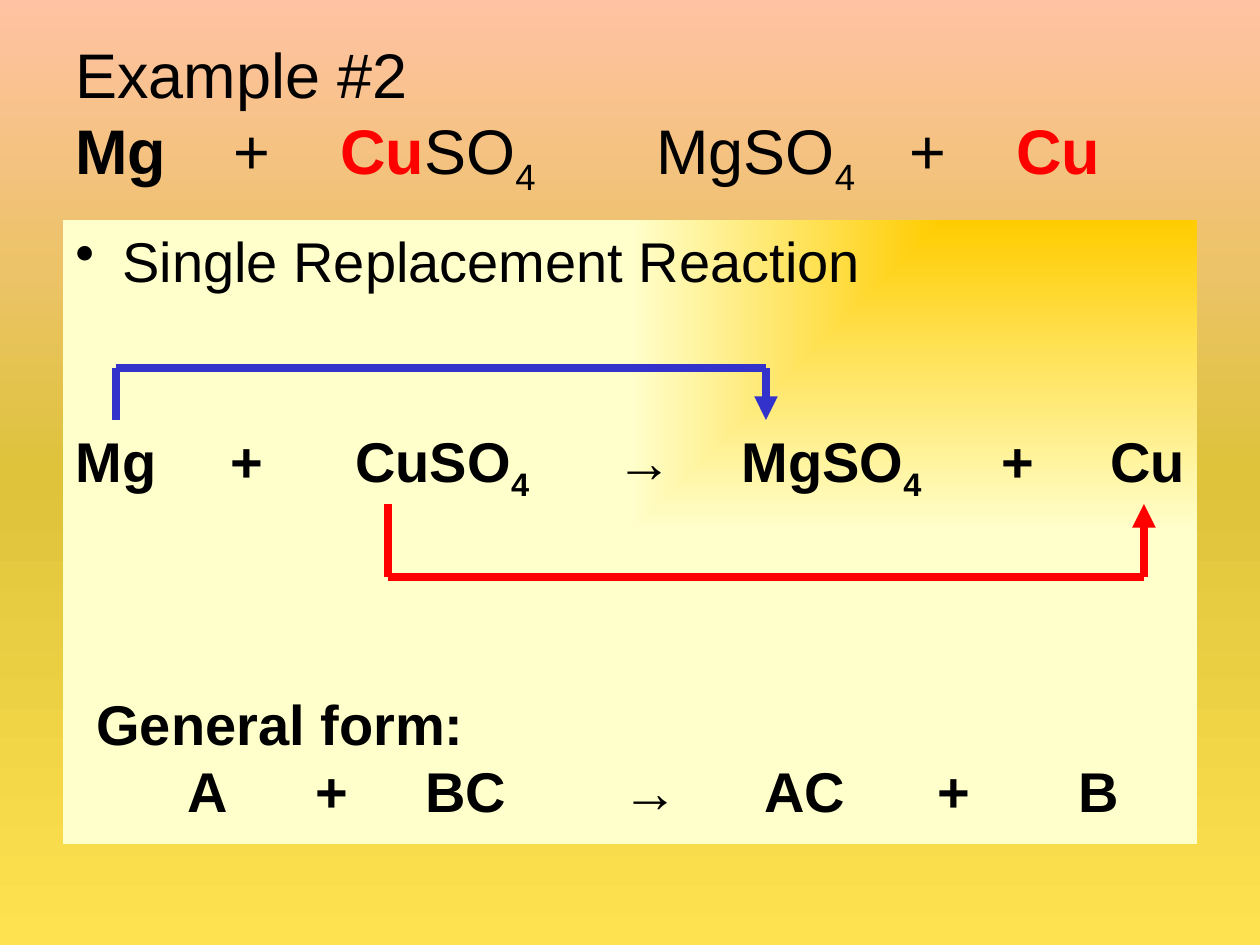
from pptx import Presentation, util as u
from pptx.dml.color import RGBColor
from pptx.enum import shapes as s, text as t
from pptx.oxml import parse_xml
from pptx.oxml.ns import nsdecls

THEME = {
    "font": "Arial", "ink": "000000", "red": "FF0000", "blue": "3333CC",
    "title": 36, "body": 32, "line": 4.5,
    "sky": [(0, "FFC2A3"), (50, "DEC33B"), (100, "FFE24F")],
    "panel": [(0, "FFCC00"), (100, "FFFFCC")],
}

# Content: a run is (text, marks), with b bold, r red, s subscript
TITLE = [
    {"runs": [("Example #2", "")]},
    {"runs": [("Mg", "b"), ("\t+\t", ""), ("Cu", "br"), ("SO", ""), ("4", "s"),
              ("\tMgSO", ""), ("4", "s"), ("\t+\t", ""), ("Cu", "br")],
     "tabs": [158, 265, 581, 834, 941]},
]
KIND = [{"runs": [("Single Replacement Reaction", "")], "bullet": 47}]
EQUATION = [
    {"runs": [("Mg\t+\tCuSO", "b"), ("4", "bs"), ("\t→\tMgSO", "b"),
              ("4", "bs"), ("\t+\tCu", "b")],
     "tabs": [155, 280, 541, 666, 926, 1035]},
]
GENERAL = [
    {"runs": [("General form:", "b")]},
    {"runs": [("\tA\t+\tBC\t→\tAC\t+\tB", "b")],
     "tabs": [91, 219, 329, 526, 668, 841, 982]},
]
TEXTS = [  # box, paragraphs, size, anchor, fill
    ((63, 38, 1134, 157), TITLE, "title", "MIDDLE", None),
    ((63, 220, 1134, 624), KIND, "body", "TOP", "panel"),
    ((63, 420, 1145, 79), EQUATION, "body", "TOP", None),
    ((84, 683, 1071, 147), GENERAL, "body", "TOP", None),
]
SWAPS = [  # colour, x from, x to, y at the text, y of the bar
    ("blue", 116, 766, 420, 368),
    ("red", 388, 1144, 504, 577),
]


def px(n):
    return round(n * 914400 / 126)


def rgb(name):
    return RGBColor.from_string(THEME[name])


def xml(tag, attrs="", inner=""):
    return parse_xml(f'<a:{tag} {nsdecls("a")} {attrs}>{inner}</a:{tag}>')


def shade(fill, root, name, kind):
    """Put the theme's gradient stops and direction in place of the default."""
    fill.gradient()
    stops = "".join(f'<a:gs pos="{pos * 1000}"><a:srgbClr val="{col}"/></a:gs>'
                    for pos, col in THEME[name])
    old = root.xpath(".//a:gradFill")[0]
    old.getparent().replace(
        old, xml("gradFill", 'rotWithShape="1"', f"<a:gsLst>{stops}</a:gsLst>{kind}"))


def write(frame, paras, size, anchor):
    look = {"word_wrap": True, "vertical_anchor": getattr(t.MSO_ANCHOR, anchor)}
    for key, val in look.items():
        setattr(frame, key, val)
    for i, item in enumerate(paras):
        para = frame.paragraphs[0] if i == 0 else frame.add_paragraph()
        para.alignment = t.PP_ALIGN.LEFT
        props = para._p.get_or_add_pPr()
        if "bullet" in item:
            gap = px(item["bullet"])
            props.set("marL", str(gap))
            props.set("indent", str(-gap))
            props.append(xml("spcBef", "", '<a:spcPct val="20000"/>'))
            props.append(xml("buChar", 'char="•"'))
        if "tabs" in item:
            props.append(xml("tabLst", "", "".join(
                f'<a:tab pos="{px(x)}" algn="l"/>' for x in item["tabs"])))
        for words, marks in item["runs"]:
            run = para.add_run()
            run.text = words
            form = {"name": THEME["font"], "size": u.Pt(THEME[size]), "bold": "b" in marks}
            for key, val in form.items():
                setattr(run.font, key, val)
            run.font.color.rgb = rgb("red" if "r" in marks else "ink")
            if "s" in marks:
                run.font._element.set("baseline", "-25000")


def draw(slide, start, end, tint, tip=False):
    line = slide.shapes.add_connector(
        s.MSO_CONNECTOR.STRAIGHT, *map(px, start + end))
    line.line.color.rgb = rgb(tint)
    line.line.width = u.Pt(THEME["line"])
    if tip:
        line.line._get_or_add_ln().append(xml("tailEnd", 'type="triangle"'))
    line._element.spPr.append(xml("effectLst"))


def main():
    deck = Presentation()
    deck.slide_width, deck.slide_height = px(1260), px(945)
    slide = deck.slides.add_slide(deck.slide_layouts[6])
    shade(slide.background.fill, slide.element, "sky", '<a:lin ang="5400000" scaled="1"/>')

    # Title, panel and equations
    for box, paras, size, anchor, fill in TEXTS:
        place = map(px, box)
        if fill:
            shape = slide.shapes.add_shape(s.MSO_SHAPE.RECTANGLE, *place)
            shape.shadow.inherit = False
            shape.line.fill.background()
            shade(shape.fill, shape._element, fill,
                  '<a:path path="rect"><a:fillToRect l="100000" b="100000"/></a:path>')
        else:
            shape = slide.shapes.add_textbox(*place)
        write(shape.text_frame, paras, size, anchor)

    # Brackets that show which element moves where
    for tint, left, right, base, bar in SWAPS:
        draw(slide, (left, bar), (right, bar), tint)
        draw(slide, (left, base), (left, bar), tint)
        draw(slide, (right, bar), (right, base), tint, tip=True)

    deck.save("out.pptx")


if __name__ == "__main__":
    main()
